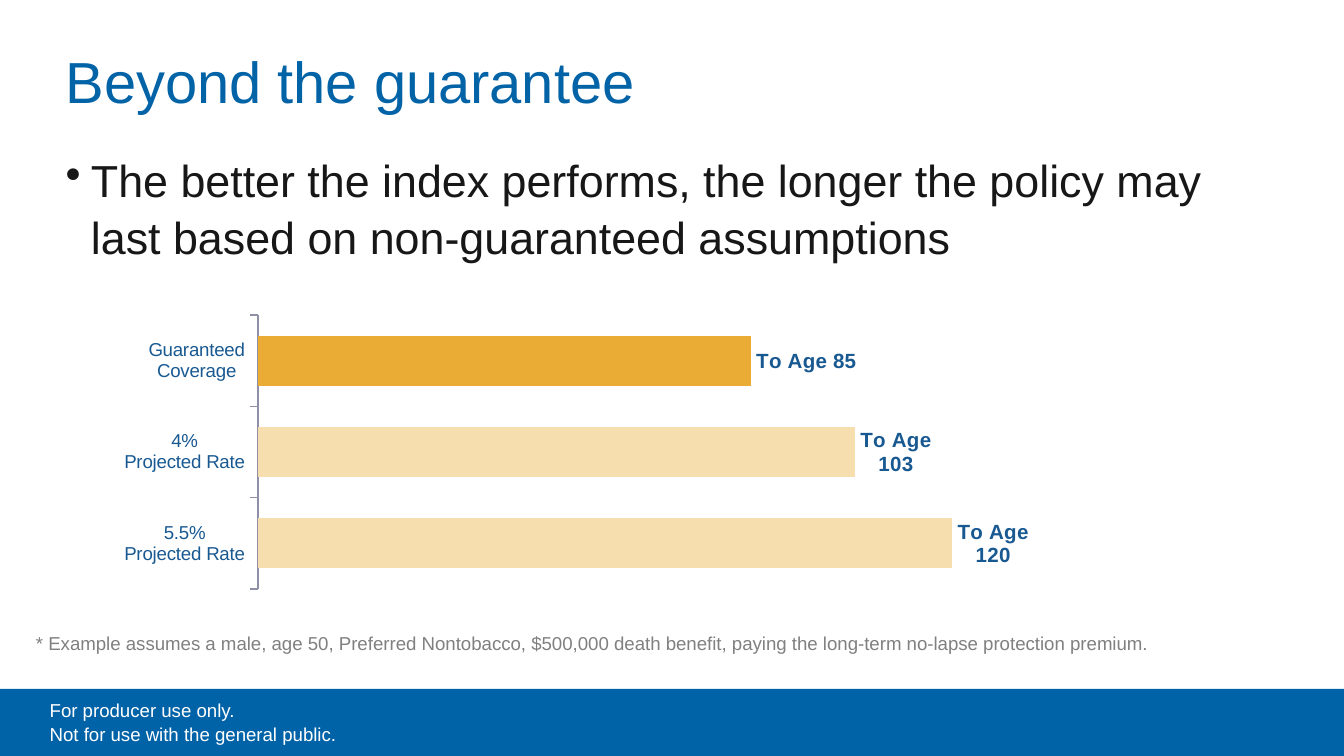
from lxml import etree
from pptx import Presentation
from pptx import util as u
from pptx.chart.data import CategoryChartData
from pptx.dml.color import RGBColor
from pptx.enum import chart as charts, shapes, text
from pptx.oxml import parse_xml
from pptx.oxml.ns import nsdecls, qn

FONT = "Arial"
BLUE = "0062A7"
NAVY = "195992"
BARS = [
    ("5.5%\nProjected Rate", 100, "To Age 120", "F7DEAE"),
    ("4%\nProjected Rate", 86, "To Age 103", "F7DEAE"),
    ("Guaranteed\nCoverage", 71, "To Age 85", "EAAC34"),
]


def colour(value):
    """Turn a hex string into a colour."""
    return RGBColor.from_string(value)


def style(font, size, value, bold=False):
    """Set the typeface, size, colour and weight of a font."""
    font.name, font.size, font.bold = FONT, u.Pt(size), bold
    font.color.rgb = colour(value)


def add_text(page, area, words, size, value, spacing=1.0, hanging=0, bullet=None,
             anchor=text.MSO_ANCHOR.TOP):
    """Place one wrapped paragraph in the given area."""
    box = page.shapes.add_textbox(*map(u.Cm, area))
    frame = box.text_frame
    frame.word_wrap, frame.vertical_anchor = True, anchor
    para = frame.paragraphs[0]
    para.text = words
    para.line_spacing = spacing
    if hanging:
        properties = para._p.get_or_add_pPr()
        properties.set("marL", str(u.Cm(hanging)))
        properties.set("indent", str(-u.Cm(hanging)))
        if bullet:
            etree.SubElement(properties, qn("a:buChar")).set("char", bullet)
    for span in para.runs:
        style(span.font, size, value)


def add_heading(page, area):
    """Place the title in the given area."""
    add_text(page, area, "Beyond the guarantee", 31, "0263A7", 0.9,
             anchor=text.MSO_ANCHOR.MIDDLE)


def add_message(page, area):
    """Place the bulleted message in the given area."""
    add_text(page, area, "The better the index performs, the longer the policy may "
             "last based on non-guaranteed assumptions", 24, "181717", 1.05, 0.48, "•")


def fix_plot(chart, left, top, width, height):
    """Set the inner plot area as fractions of the chart."""
    plot_area = chart._chartSpace.chart.plotArea
    for layout in plot_area.findall(qn("c:layout")):
        plot_area.remove(layout)
    places = "".join(f'<c:{tag} val="{value}"/>' for tag, value in
                     (("x", left), ("y", top), ("w", width), ("h", height)))
    plot_area.insert(0, parse_xml(
        f'<c:layout {nsdecls("c")}><c:manualLayout><c:layoutTarget val="inner"/>'
        f'<c:xMode val="edge"/><c:yMode val="edge"/>{places}'
        '</c:manualLayout></c:layout>'))


def add_coverage_chart(page, area):
    """Place the bar chart of coverage ages in the given area."""
    data = CategoryChartData()
    data.categories = [bar[0] for bar in BARS]
    data.add_series("", [bar[1] for bar in BARS])
    chart = page.shapes.add_chart(
        charts.XL_CHART_TYPE.BAR_CLUSTERED, *map(u.Cm, area), data).chart
    chart.has_legend = chart.has_title = False
    style(chart.font, 10, NAVY)
    fix_plot(chart, 0.141, 0.051, 0.73, 0.898)

    ages = chart.value_axis
    ages.minimum_scale, ages.maximum_scale = 0, 100
    ages.has_major_gridlines = ages.visible = False
    names = chart.category_axis
    names.major_tick_mark = charts.XL_TICK_MARK.OUTSIDE
    names.format.line.color.rgb = colour("8F8FA8")
    names.format.line.width = u.Pt(0.75)
    style(names.tick_labels.font, 10, NAVY)

    plot = chart.plots[0]
    plot.gap_width, plot.vary_by_categories = 83, False
    series = plot.series[0]
    series.format.fill.solid()
    series.format.fill.fore_color.rgb = colour("0063A6")
    for index, (_, _, label, fill) in enumerate(BARS):
        point = series.points[index]
        point.format.fill.solid()
        point.format.fill.fore_color.rgb = colour(fill)
        para = point.data_label.text_frame.paragraphs[0]
        para.text = label
        style(para.runs[0].font, 11, NAVY, True)
        point.data_label.position = charts.XL_LABEL_POSITION.OUTSIDE_END


def add_footnote(page, area):
    """Place the example's assumptions in the given area."""
    add_text(page, area, "* Example assumes a male, age 50, Preferred Nontobacco, $500,000 "
             "death benefit, paying the long-term no-lapse protection premium.",
             10, "808080", hanging=0.33)


def add_footer(page, area):
    """Place the footer band and its notice in the given area."""
    left, top, width, height = area
    band = page.shapes.add_shape(shapes.MSO_SHAPE.RECTANGLE, *map(u.Cm, area))
    band.shadow.inherit = False
    band.fill.solid()
    band.fill.fore_color.rgb = colour(BLUE)
    band.line.fill.background()
    add_text(page, (left + 0.69, top + 0.03, 9.09, height - 0.15),
             "For producer use only.\nNot for use with the general public.",
             10, "FFFFFF", 1.07)


def main():
    """Build the slide and save the deck."""
    deck = Presentation()
    deck.slide_width, deck.slide_height = u.Cm(25.4), u.Cm(14.29)
    page = deck.slides.add_slide(deck.slide_layouts[6])
    add_footer(page, (0, 13.02, 25.4, 1.27))
    add_heading(page, (0.99, 0.81, 22.96, 1.6))
    add_message(page, (0.99, 2.72, 22.96, 2.5))
    add_coverage_chart(page, (2.34, 5.66, 17.98, 5.77))
    add_footnote(page, (0.43, 11.81, 23.29, 0.69))
    deck.save("out.pptx")


if __name__ == "__main__":
    main()
